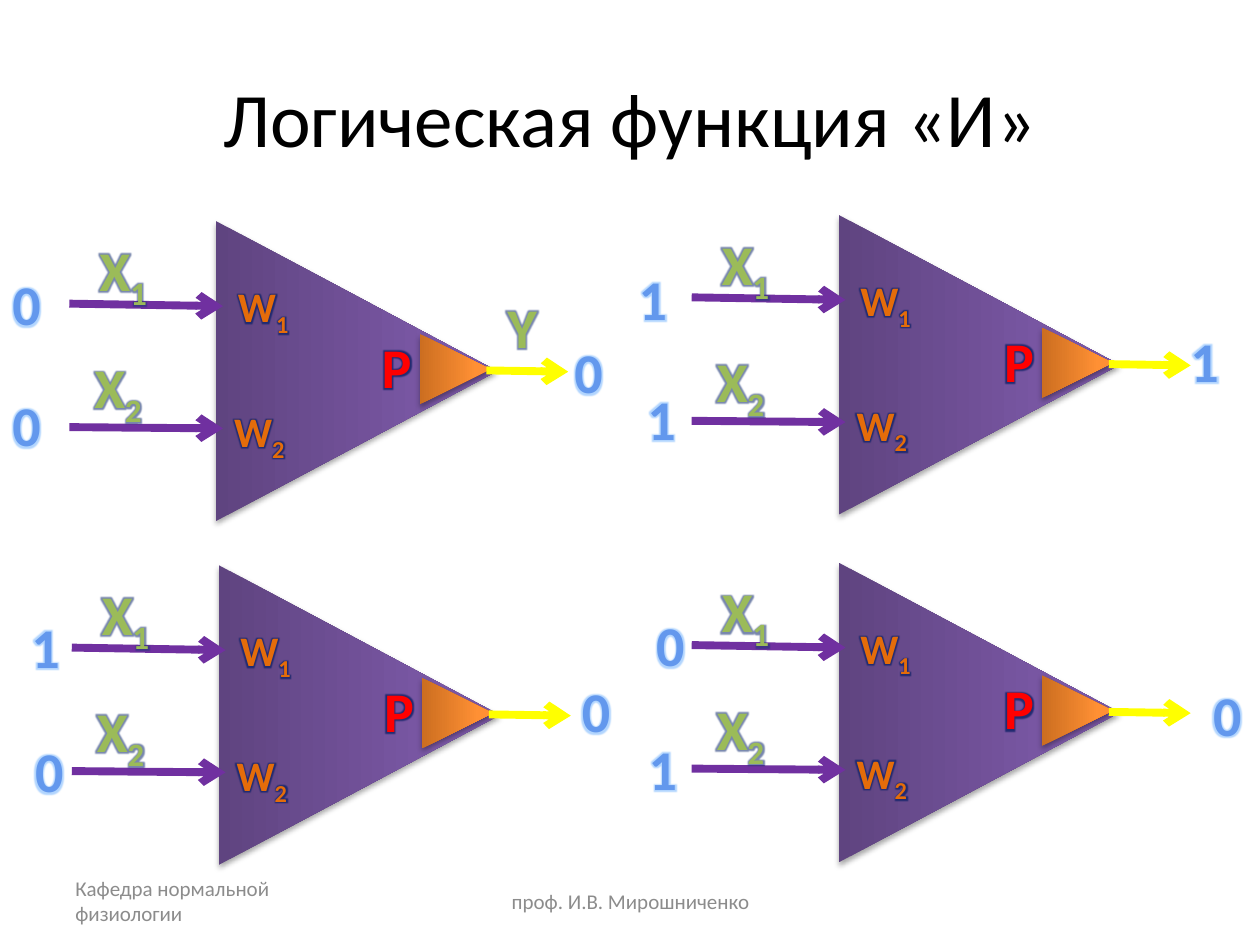
from lxml import etree
from pptx import Presentation
from pptx.dml.color import RGBColor
from pptx.enum.shapes import MSO_CONNECTOR, MSO_SHAPE
from pptx.enum.text import MSO_ANCHOR, MSO_AUTO_SIZE, PP_ALIGN
from pptx.oxml import parse_xml
from pptx.oxml.ns import qn
from pptx.util import Inches, Pt

NS = 'xmlns:a="http://schemas.openxmlformats.org/drawingml/2006/main"'
BLACK = RGBColor(0x00, 0x00, 0x00)
GRAY = RGBColor(0x8C, 0x8C, 0x8C)
GREEN = RGBColor(0x9B, 0xBB, 0x59)
ORANGE = RGBColor(0xE4, 0x6C, 0x0A)
RED = RGBColor(0xFF, 0x00, 0x00)
PURPLE = RGBColor(0x70, 0x30, 0xA0)
YELLOW = RGBColor(0xFF, 0xFF, 0x00)
BODY_COLORS = RGBColor(0x5F, 0x44, 0x80), RGBColor(0x7B, 0x58, 0xA6)
TIP_COLORS = RGBColor(0xCC, 0x6E, 0x20), RGBColor(0xFF, 0x90, 0x34)
DIGIT_COLORS = RGBColor(0x63, 0x98, 0xED), RGBColor(0x26, 0x5E, 0xA0)
DIGIT_OUTLINE = RGBColor(0xF4, 0xF6, 0xF9)
SOFT_GLOW = RGBColor(0x1F, 0x38, 0x78), 60
NAVY_GLOW = RGBColor(0x1F, 0x2A, 0x70), 95
LIGHT_GLOW = RGBColor(0xA0, 0xCC, 0xFF), 80


def set_gradient(fill, colors, positions, angle):
    fill.gradient()
    fill.gradient_angle = angle
    for stop, color, position in zip(fill.gradient_stops, colors, positions):
        stop.color.rgb = color
        stop.position = position


def add_label(shapes, text, left, top, width, height, size, color, glow):
    """Add bold glowing text; characters after the first are subscript.

    A pair of colors makes a gradient digit with an outline.
    """
    box = shapes.add_textbox(Inches(left), Inches(top), Inches(width), Inches(height))
    frame = box.text_frame
    is_digit = not isinstance(color, RGBColor)
    frame.word_wrap = not is_digit
    frame.auto_size = MSO_AUTO_SIZE.SHAPE_TO_FIT_TEXT
    para = frame.paragraphs[0]
    for index, letter in enumerate(text):
        span = para.add_run()
        span.text = letter
        font = span.font
        font.name, font.size, font.bold = "Calibri", Pt(size), True
        props = span._r.get_or_add_rPr()
        if is_digit:
            set_gradient(font.fill, color, (0.1, 0.75), 270)
            props.set("spc", "300")
            props.insert(0, parse_xml(
                f'<a:ln {NS} w="11430"><a:solidFill><a:srgbClr val="{DIGIT_OUTLINE}"/>'
                '</a:solidFill></a:ln>'))
        else:
            font.color.rgb = color
        if index:
            props.set("baseline", "-25000")
        glow_color, opacity = glow
        props.find(qn("a:latin")).addprevious(parse_xml(
            f'<a:effectLst {NS}><a:glow rad="45000"><a:srgbClr val="{glow_color}">'
            f'<a:alpha val="{opacity * 1000}"/></a:srgbClr></a:glow></a:effectLst>'))


deck = Presentation()
deck.slide_width, deck.slide_height = Inches(10), Inches(7.5)
page = deck.slides.add_slide(deck.slide_layouts[5])

title = page.shapes.title
title.left, title.top, title.width, title.height = (
    Inches(0.5), Inches(0.3), Inches(9), Inches(1.25))
title.text_frame.text = "Логическая функция «И»"
title.text_frame.vertical_anchor = MSO_ANCHOR.MIDDLE
para = title.text_frame.paragraphs[0]
para.alignment = PP_ALIGN.CENTER
para.font.name, para.font.size, para.font.color.rgb = "Calibri", Pt(44), BLACK

add_label(page.shapes, "Y", 3.93, 2.27, 0.78, 0.64, 32, GREEN, SOFT_GLOW)

# One neuron, drawn at the offset of each of the four cases
triangles = [
    (1.64, 1.83, 2.38, 2.23, BODY_COLORS),
    (3.33, 2.65, 0.56, 0.56, TIP_COLORS),
]
arrows = [
    (0.55, 2.41, 1.77, 2.43, PURPLE),
    (0.55, 3.39, 1.77, 3.4, PURPLE),
    (3.86, 2.94, 4.51, 2.95, YELLOW),
]
labels = [
    ("X1", 0.69, 1.82, 0.64, 32, GREEN, SOFT_GLOW),
    ("X2", 0.65, 2.75, 0.64, 32, GREEN, SOFT_GLOW),
    ("W1", 1.79, 2.18, 0.5, 24, ORANGE, NAVY_GLOW),
    ("W2", 1.76, 3.17, 0.5, 24, ORANGE, NAVY_GLOW),
    ("P", 2.93, 2.59, 0.64, 32, RED, NAVY_GLOW),
]
for dx, dy in [(0, 0), (4.94, -0.05), (0.02, 2.73), (4.94, 2.71)]:
    neuron = page.shapes.add_group_shape().shapes
    body, tip = [
        neuron.add_shape(MSO_SHAPE.ISOSCELES_TRIANGLE, Inches(left + dx),
                         Inches(top + dy), Inches(width), Inches(height))
        for left, top, width, height, _ in triangles
    ]
    for triangle, (*_, colors) in zip((body, tip), triangles):
        triangle.rotation = 90
        set_gradient(triangle.fill, colors, (0, 0.8), 90)
        triangle.line.fill.background()
        triangle.shadow.inherit = False
        triangle._element.spPr.find(qn("a:effectLst")).append(parse_xml(
            f'<a:outerShdw {NS} blurRad="40000" dist="23000" dir="5400000" '
            'rotWithShape="0"><a:srgbClr val="000000"><a:alpha val="35000"/>'
            '</a:srgbClr></a:outerShdw>'))
    for x1, y1, x2, y2, color in arrows:
        arrow = neuron.add_connector(
            MSO_CONNECTOR.STRAIGHT, Inches(x1 + dx), Inches(y1 + dy),
            Inches(x2 + dx), Inches(y2 + dy))
        arrow.line.color.rgb = color
        arrow.line.width = Pt(4.5)
        etree.SubElement(arrow.line._get_or_add_ln(), qn("a:tailEnd"), type="arrow")
        etree.SubElement(arrow._element.spPr, qn("a:effectLst"))
    for text, left, top, height, size, color, glow in labels:
        add_label(neuron, text, left + dx, top + dy, 0.78, height, size, color, glow)

# Inputs and output of each case
digits = [
    ("0", 0, 2.09), ("0", 0, 3.05), ("0", 4.46, 2.63),
    ("1", 4.97, 2.05), ("1", 5.04, 3), ("1", 9.35, 2.54),
    ("1", 0.15, 4.81), ("0", 0.18, 5.8), ("0", 4.52, 5.32),
    ("0", 5.11, 4.8), ("1", 5.05, 5.78), ("0", 9.53, 5.35),
]
for digit, left, top in digits:
    add_label(page.shapes, digit, left, top, 0.47, 0.64, 32, DIGIT_COLORS, LIGHT_GLOW)

footers = [
    ("Кафедра нормальной физиологии", 0.5, 2.33, PP_ALIGN.LEFT),
    ("проф. И.В. Мирошниченко", 3.42, 3.17, PP_ALIGN.CENTER),
]
for text, left, width, alignment in footers:
    box = page.shapes.add_textbox(Inches(left), Inches(6.95), Inches(width), Inches(0.4))
    box.text_frame.word_wrap = True
    box.text_frame.vertical_anchor = MSO_ANCHOR.MIDDLE
    para = box.text_frame.paragraphs[0]
    para.text = text
    para.alignment = alignment
    para.font.name, para.font.size, para.font.color.rgb = "Calibri", Pt(12), GRAY

deck.save("out.pptx")
